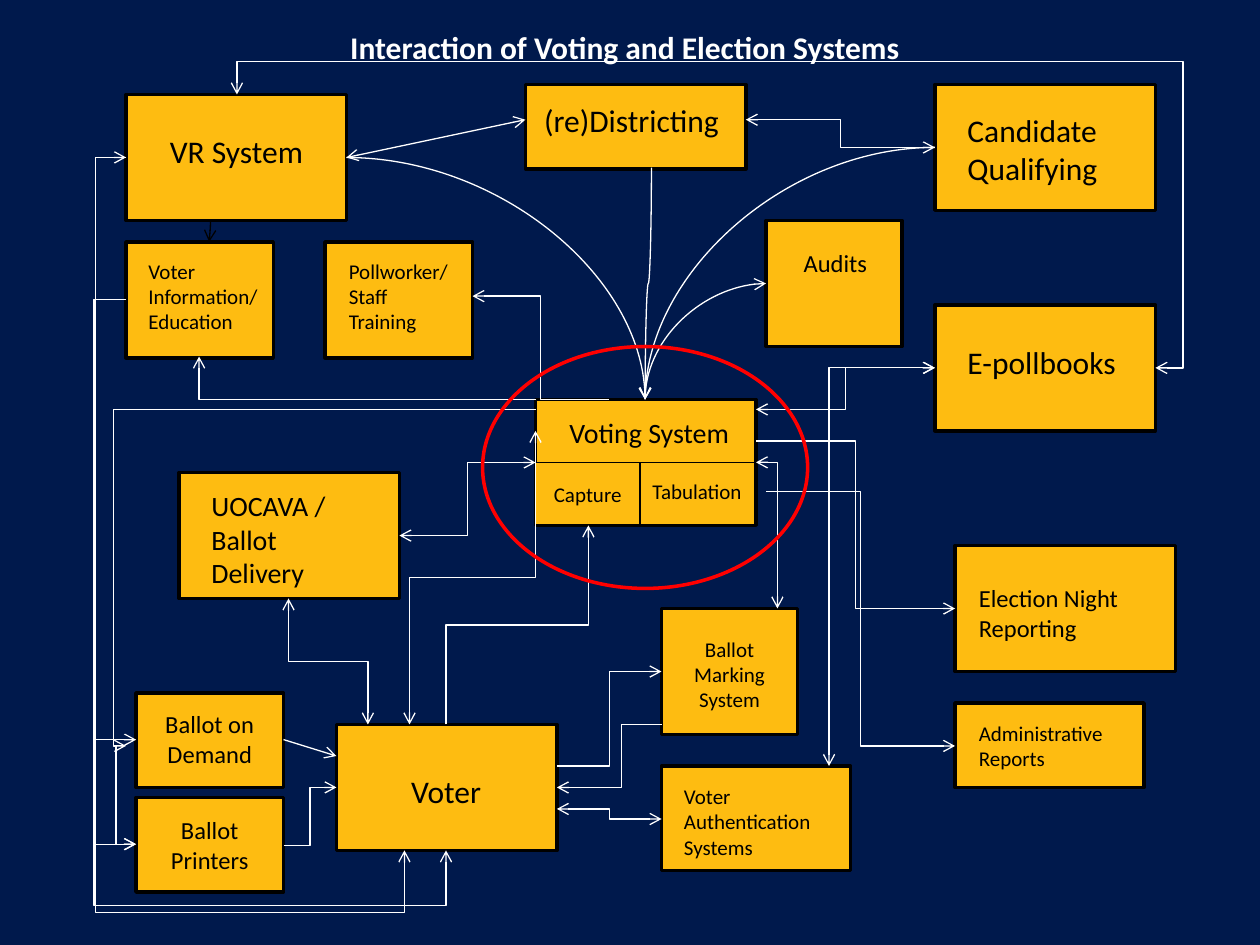
from lxml.etree import SubElement
from pptx import Presentation
from pptx.dml.color import RGBColor
from pptx.enum.shapes import MSO_CONNECTOR as Route, MSO_SHAPE as Preset
from pptx.enum.text import MSO_ANCHOR as Anchor, MSO_AUTO_SIZE as Fit, PP_ALIGN as Align
from pptx.oxml.ns import qn
from pptx.util import Inches, Pt

NAVY, GOLD, BLACK, WHITE, RED = "00194C", "FEBC11", "000000", "FFFFFF", "FF0000"
LEFT, CENTER = Align.LEFT, Align.CENTER
COSINE_SINE = {0: (1, 0), 90: (0, 1), 180: (-1, 0), 270: (0, -1)}


def color(value):
    return RGBColor.from_string(value)


class Diagram:
    """Draws the boxes, labels and links of one page in a shared style."""

    def __init__(self, deck, font="Calibri"):
        self.font = font
        self.page = deck.slides.add_slide(deck.slide_layouts[5])
        self.page.background.fill.solid()
        self.page.background.fill.fore_color.rgb = color(NAVY)

    def set_text(self, frame, text, size, align, ink=BLACK, bold=False):
        frame.word_wrap = True
        frame.text = text
        for para in frame.paragraphs:
            para.alignment = align
            para.font.name = self.font
            para.font.size = Pt(size)
            para.font.bold = bold
            para.font.color.rgb = color(ink)

    def title(self, text, place):
        box = self.page.shapes.title
        box.left, box.top, box.width, box.height = map(Inches, place)
        self.set_text(box.text_frame, text, 18, CENTER, WHITE, True)
        box.text_frame.auto_size = Fit.NONE
        box.text_frame.vertical_anchor = Anchor.TOP

    def shape(self, place, preset=Preset.RECTANGLE, fill=GOLD, line=BLACK, width=2):
        shape = self.page.shapes.add_shape(preset, *map(Inches, place))
        shape.shadow.inherit = False
        if fill:
            shape.fill.solid()
            shape.fill.fore_color.rgb = color(fill)
        else:
            shape.fill.background()
        shape.line.color.rgb = color(line)
        shape.line.width = Pt(width)
        return shape

    def label(self, text, place, size, align=LEFT):
        box = self.page.shapes.add_textbox(*map(Inches, place))
        self.set_text(box.text_frame, text, size, align)
        box.text_frame.auto_size = Fit.SHAPE_TO_FIT_TEXT

    def link(self, start, end, preset="line", turn=0, adjust=(), both=False,
             ink=WHITE, arrow=True):
        """Joins two points; turn is the rotation of the preset route in degrees."""
        cosine, sine = COSINE_SINE[turn]
        across, down = end[0] - start[0], end[1] - start[1]
        half_width = (across * cosine + down * sine) / 2
        half_height = (down * cosine - across * sine) / 2
        middle, center = (start[0] + end[0]) / 2, (start[1] + end[1]) / 2
        line = self.page.shapes.add_connector(
            Route.STRAIGHT,
            Inches(middle - half_width), Inches(center - half_height),
            Inches(middle + half_width), Inches(center + half_height))
        line.line.color.rgb = color(ink)
        line.line.width = Pt(0.75)
        properties = line._element.spPr
        if turn:
            properties.find(qn("a:xfrm")).set("rot", str(turn * 60000))
        geometry = properties.find(qn("a:prstGeom"))
        geometry.set("prst", preset)
        guides = geometry.find(qn("a:avLst"))
        if guides is None:
            guides = SubElement(geometry, qn("a:avLst"))
        for number, share in enumerate(adjust, 1):
            SubElement(guides, qn("a:gd"), name=f"adj{number}",
                       fmla=f"val {round(share * 100000)}")
        outline = properties.find(qn("a:ln"))
        if both:
            SubElement(outline, qn("a:headEnd"), type="arrow")
        if arrow:
            SubElement(outline, qn("a:tailEnd"), type="arrow")
        SubElement(properties, qn("a:effectLst"))


BOXES = [
    (4.25, 3.17, 1.75, 1), (7.58, 5.58, 1.5, 0.67), (4.17, 0.67, 1.75, 0.67),
    (1, 0.75, 1.75, 1), (1, 1.92, 1.17, 0.92), (2.67, 5.75, 1.75, 1),
    (1.42, 3.75, 1.75, 1), (7.58, 4.33, 1.75, 1), (7.42, 2.42, 1.75, 1),
    (7.42, 0.67, 1.75, 1), (5.25, 4.83, 1.08, 1), (1.08, 6.33, 1.17, 0.75),
    (1.08, 5.5, 1.17, 0.75), (6.08, 1.75, 1.08, 1), (2.58, 1.92, 1.17, 0.92),
    (5.25, 6.08, 1.5, 0.83),
]

LABELS = [
    ("Voting System", (4.42, 3.25, 1.5, 0.37), 16, LEFT),
    ("Tabulation", (5.08, 3.75, 1, 0.3), 12, LEFT),
    ("Voter", (3, 6.08, 1.08, 0.4), 18, CENTER),
    ("Ballot Marking System", (5.33, 5, 0.92, 0.71), 12, CENTER),
    ("Administrative Reports", (7.67, 5.67, 1.58, 0.5), 12, LEFT),
    ("Election Night Reporting", (7.67, 4.58, 1.58, 0.57), 14, LEFT),
    ("E-pollbooks", (7.58, 2.67, 1.42, 0.4), 18, LEFT),
    ("Candidate Qualifying", (7.58, 0.83, 1.42, 0.71), 18, LEFT),
    ("VR System", (1.25, 1, 1.33, 0.4), 18, LEFT),
    ("UOCAVA /\nBallot Delivery", (1.58, 3.83, 1.33, 0.91), 16, LEFT),
    ("Voter Information/\nEducation", (1.08, 2, 1.08, 0.71), 12, LEFT),
    ("Ballot Printers", (1.08, 6.42, 1.17, 0.57), 14, CENTER),
    ("(re)Districting", (4.22, 0.75, 1.7, 0.4), 18, LEFT),
    ("Ballot on Demand", (1.08, 5.58, 1.17, 0.57), 14, CENTER),
    ("Audits", (6.17, 1.92, 0.92, 0.34), 14, CENTER),
    ("Pollworker/\nStaff\nTraining", (2.67, 2, 1.08, 0.71), 12, LEFT),
    ("Voter Authentication Systems", (5.33, 6.17, 1.33, 0.71), 12, LEFT),
]

VOTING_TOP = (5.12, 3.17)
VR_RIGHT, VR_LEFT = (2.75, 1.25), (1, 1.25)
BENT2, BENT3, BENT4 = (f"bentConnector{count}" for count in (2, 3, 4))
CURVE2, CURVE3 = "curvedConnector2", "curvedConnector3"

ONE_WAY = [
    ((5.17, 1.33), VOTING_TOP, CURVE3, 90),
    (VR_RIGHT, VOTING_TOP, CURVE2),
    ((7.42, 1.17), VOTING_TOP, CURVE2, 180),
    (VOTING_TOP, (6.08, 2.25), CURVE2, 90),
    ((2.25, 5.87), (2.67, 6)),
    ((4.25, 3.25), (1, 5.92), BENT3, 180, (1.03,)),
    ((0.92, 5.92), (1.08, 6.7), BENT2, 270),
    (VR_LEFT, (1.08, 5.87), BENT3, 180, (-3,)),
    ((0.75, 5.83), (1.08, 6.7), BENT2, 270),
    ((4.25, 3.17), (1.58, 2.83), BENT2, 180),
    ((4.83, 3.17), (3.75, 2.35), BENT3, 180),
    ((6.08, 3.9), (7.58, 5.92), BENT3),
    ((6, 3.5), (7.58, 4.83), BENT3),
    ((3.54, 5.75), (4.67, 4.17), BENT3, 90),
    ((4.42, 6.08), (5.25, 5.33), BENT3),
    ((5.25, 5.75), (4.42, 6.25), BENT3, 180, (0.38,)),
    ((1, 2.38), (3.54, 6.75), BENT4, 180, (-0.1, 1.1)),
    ((2.25, 6.71), (2.67, 6.25), BENT3),
]

TWO_WAY = [
    ((1.88, 0.75), (9.17, 2.92), BENT4, 270, (-0.12, 1.03)),
    (VR_RIGHT, (4.17, 0.95)),
    ((6.17, 4.83), (6, 3.67), BENT2, 270),
    ((6, 3.25), (7.42, 2.92), BENT3),
    ((4.25, 3.42), (3.25, 5.75), BENT3, 90),
    ((4.25, 3.67), (3.17, 4.25), BENT3, 180),
    ((2.29, 4.75), (2.92, 5.75), BENT3, 270),
    ((3.21, 6.75), VR_LEFT, BENT4, 270, (-0.09, 1.11)),
    ((6.58, 6.08), (7.42, 2.92), BENT2, 90),
    ((5.25, 6.5), (4.42, 6.42), BENT3, 180),
    ((5.92, 0.95), (7.42, 1.17), BENT3),
]


def main():
    deck = Presentation()
    deck.slide_width, deck.slide_height = Inches(10), Inches(7.5)
    diagram = Diagram(deck)
    diagram.title("Interaction of Voting and Election Systems", (1.92, 0.17, 6.08, 0.4))
    for place in BOXES:
        diagram.shape(place)
    diagram.link((4.25, 3.67), (6, 3.67), ink=BLACK, arrow=False)
    capture = diagram.shape((4.25, 3.67, 0.83, 0.5), width=1)
    diagram.set_text(capture.text_frame, "Capture", 12, CENTER)
    for label in LABELS:
        diagram.label(*label)
    diagram.link((1.67, 1.76), (1.66, 1.92), CURVE3, 90, ink=BLACK)
    for route in ONE_WAY:
        diagram.link(*route)
    for route in TWO_WAY:
        diagram.link(*route, both=True)
    diagram.shape((3.83, 2.75, 2.58, 1.92), Preset.OVAL, None, RED)
    deck.save("out.pptx")


if __name__ == "__main__":
    main()
